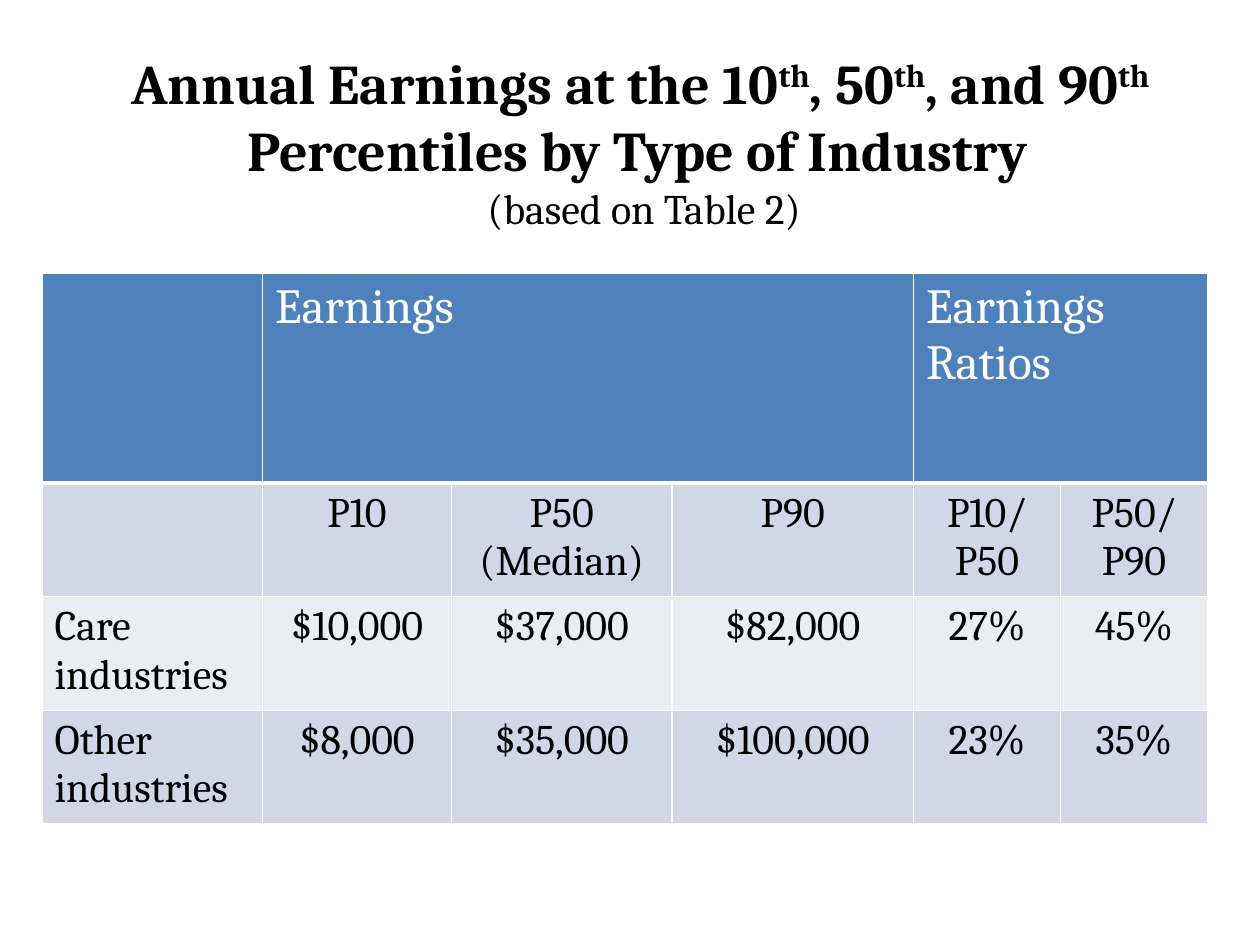
from dataclasses import dataclass

from lxml.etree import SubElement
from pptx import Presentation
from pptx.dml.color import RGBColor
from pptx.enum.text import MSO_AUTO_SIZE, PP_ALIGN
from pptx.oxml.ns import qn
from pptx.util import Pt


@dataclass(frozen=True)
class Theme:
    font: str = "Cambria"
    title: int = 32
    header: int = 28
    body: int = 24
    black: str = "000000"
    white: str = "FFFFFF"
    blue: str = "4F81BD"
    bands: tuple = ("D0D8E8", "E9EDF4")


T = Theme()

TITLE = [("Annual Earnings at the 10", False), ("th", True), (", 50", False),
         ("th", True), (", and 90", False), ("th ", True)]
COL_WIDTHS = [126, 108, 126, 138, 84, 84]
ROW_HEIGHTS = [120, 65, 65, 65]
HEADER_SPANS = [(1, 3, "Earnings"), (4, 5, "Earnings Ratios")]
ROWS = [
    ["", "P10", "P50 (Median)", "P90", "P10/P50", "P50/P90"],
    ["Care industries", "$10,000", "$37,000", "$82,000", "27%", "45%"],
    ["Other industries", "$8,000", "$35,000", "$100,000", "23%", "35%"],
]


def add_text(p, text, size=T.body, color=T.black, bold=False, raised=False,
             align=PP_ALIGN.CENTER):
    p.alignment = align
    r = p.add_run()
    r.text = text
    f = r.font
    f.name, f.size, f.bold = T.font, Pt(size), bold
    f.color.rgb = RGBColor.from_string(color)
    if raised:
        f._element.set("baseline", "30000")


def style_cell(cell, fill, top=1, bottom=1):
    tc_pr = cell._tc.get_or_add_tcPr()
    for side, width in (("L", 1), ("R", 1), ("T", top), ("B", bottom)):
        ln = SubElement(tc_pr, qn(f"a:ln{side}"), w=str(Pt(width)))
        solid = SubElement(ln, qn("a:solidFill"))
        SubElement(solid, qn("a:srgbClr"), val=T.white)
    cell.fill.solid()
    cell.fill.fore_color.rgb = RGBColor.from_string(fill)


def add_title(s, left, top, width, height):
    tf = s.shapes.add_textbox(Pt(left), Pt(top), Pt(width), Pt(height)).text_frame
    tf.word_wrap = False
    tf.auto_size = MSO_AUTO_SIZE.SHAPE_TO_FIT_TEXT
    for text, raised in TITLE:
        add_text(tf.paragraphs[0], text, size=T.title, bold=True, raised=raised)
    add_text(tf.add_paragraph(), "Percentiles by Type of Industry ",
             size=T.title, bold=True)
    add_text(tf.add_paragraph(), "(based on Table 2)")


def add_earnings_table(s, left, top):
    table = s.shapes.add_table(
        len(ROW_HEIGHTS), len(COL_WIDTHS), Pt(left), Pt(top),
        Pt(sum(COL_WIDTHS)), Pt(sum(ROW_HEIGHTS))).table
    for col, width in zip(table.columns, COL_WIDTHS):
        col.width = Pt(width)
    for row, height in zip(table.rows, ROW_HEIGHTS):
        row.height = Pt(height)

    # Header row with merged groups
    for c in range(len(COL_WIDTHS)):
        style_cell(table.cell(0, c), T.blue, bottom=3)
    for first, last, text in HEADER_SPANS:
        cell = table.cell(0, first)
        cell.merge(table.cell(0, last))
        add_text(cell.text_frame.paragraphs[0], text, size=T.header,
                 color=T.white, align=PP_ALIGN.LEFT)

    # Banded body rows
    for i, values in enumerate(ROWS):
        for c, text in enumerate(values):
            cell = table.cell(i + 1, c)
            style_cell(cell, T.bands[i % 2], top=1 if i else 3)
            if text:
                add_text(cell.text_frame.paragraphs[0], text,
                         align=PP_ALIGN.CENTER if c else PP_ALIGN.LEFT)


def main():
    prs = Presentation()
    prs.slide_width, prs.slide_height = Pt(720), Pt(540)
    s = prs.slides.add_slide(prs.slide_layouts[6])
    add_earnings_table(s, 24, 156)
    add_title(s, 54, 24, 628, 114)
    prs.save("out.pptx")


if __name__ == "__main__":
    main()
